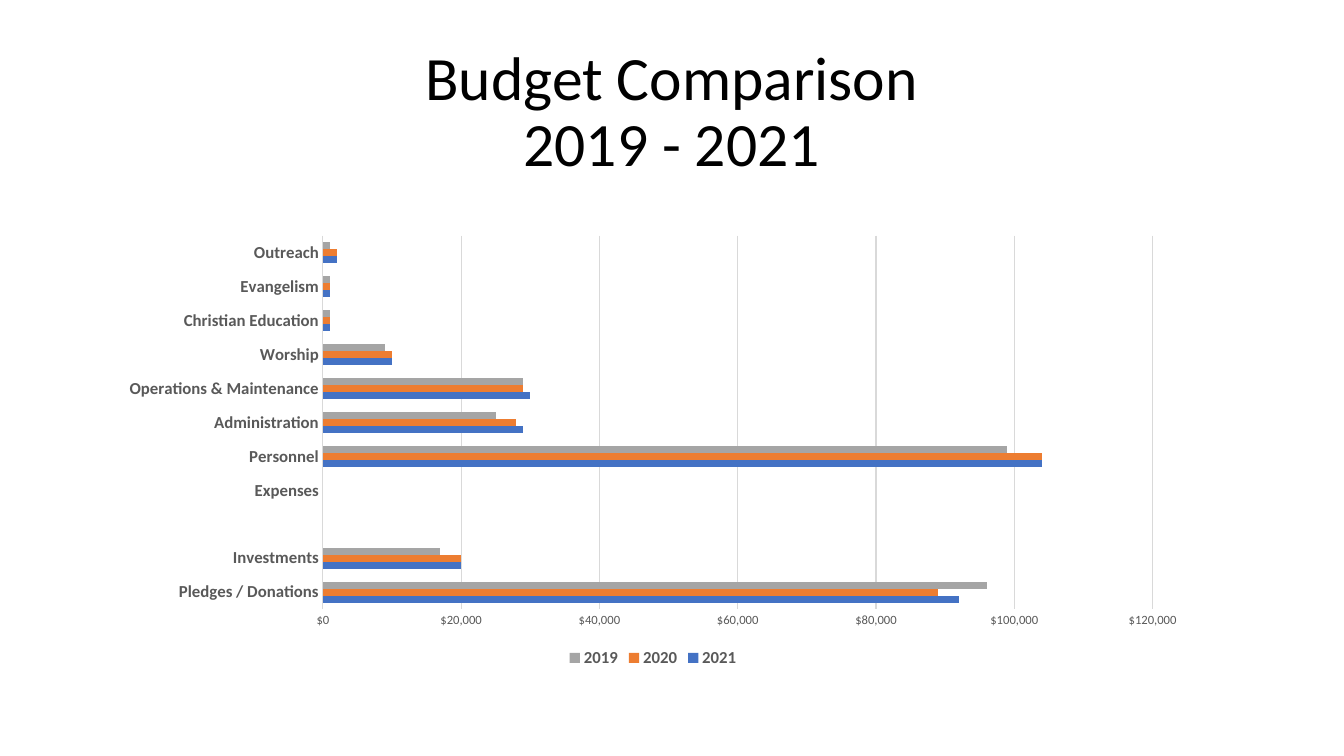
import pptx
import pptx.chart.data
import pptx.dml.color
import pptx.enum.chart
import pptx.enum.text
import pptx.util

Pt = pptx.util.Pt

FONT = "Calibri"
TITLE_LINES = ["Budget Comparison", "2019 - 2021"]
TITLE_BOX = (66, 28.8, 828, 104.4)
CHART_BOX = (77, 162, 779, 318)
YEARS = [("2021", "4472C4"), ("2020", "ED7D31"), ("2019", "A5A5A5")]
BUDGET = [
    ("Pledges / Donations", 92000, 89000, 96000),
    ("Investments", 20000, 20000, 17000),
    ("", None, None, None),
    ("Expenses", None, None, None),
    ("Personnel", 104000, 104000, 99000),
    ("Administration", 29000, 28000, 25000),
    ("Operations & Maintenance", 30000, 29000, 29000),
    ("Worship", 10000, 10000, 9000),
    ("Christian Education", 1000, 1000, 1000),
    ("Evangelism", 1000, 1000, 1000),
    ("Outreach", 2000, 2000, 1000),
]


def color(value):
    return pptx.dml.color.RGBColor.from_string(value)


def set_font(font, size, value, bold=False):
    font.name = FONT
    font.size = Pt(size)
    font.bold = bold
    font.color.rgb = color(value)


def set_line(line):
    line.color.rgb = color("D9D9D9")
    line.width = Pt(0.75)


def add_title(page):
    frame = page.shapes.add_textbox(*map(Pt, TITLE_BOX)).text_frame
    frame.word_wrap = True
    frame.vertical_anchor = pptx.enum.text.MSO_ANCHOR.MIDDLE
    para = frame.paragraphs[0]
    para.alignment = pptx.enum.text.PP_ALIGN.CENTER
    para.line_spacing = 0.9
    for index, line in enumerate(TITLE_LINES):
        if index:
            para.add_line_break()
        span = para.add_run()
        span.text = line
        set_font(span.font, 44, "000000")


def add_budget_chart(page):
    names, *columns = zip(*BUDGET)
    data = pptx.chart.data.CategoryChartData(number_format='"$"#,##0')
    data.categories = names
    for (year, _), values in zip(YEARS, columns):
        data.add_series(year, values)
    kind = pptx.enum.chart.XL_CHART_TYPE.BAR_CLUSTERED
    chart = page.shapes.add_chart(kind, *map(Pt, CHART_BOX), data).chart
    chart.has_title = False
    set_font(chart.font, 10, "000000")

    plot = chart.plots[0]
    plot.gap_width = 182
    plot.vary_by_categories = False
    for series, (_, fill) in zip(plot.series, YEARS):
        series.format.fill.solid()
        series.format.fill.fore_color.rgb = color(fill)
        series.invert_if_negative = False

    no_tick = pptx.enum.chart.XL_TICK_MARK.NONE
    for axis, size, bold in [(chart.category_axis, 12, True), (chart.value_axis, 9, False)]:
        axis.major_tick_mark = axis.minor_tick_mark = no_tick
        set_font(axis.tick_labels.font, size, "595959", bold)
    chart.category_axis.has_major_gridlines = False
    set_line(chart.category_axis.format.line)

    amounts = chart.value_axis
    amounts.minimum_scale = 0
    amounts.maximum_scale = 120000
    amounts.major_unit = 20000
    amounts.has_major_gridlines = True
    set_line(amounts.major_gridlines.format.line)
    amounts.format.line.fill.background()
    amounts.tick_labels.number_format = '"$"#,##0'
    amounts.tick_labels.number_format_is_linked = False

    chart.has_legend = True
    chart.legend.position = pptx.enum.chart.XL_LEGEND_POSITION.BOTTOM
    chart.legend.include_in_layout = False
    set_font(chart.legend.font, 12, "595959", True)


def main():
    deck = pptx.Presentation()
    deck.slide_width = Pt(960)
    deck.slide_height = Pt(540)
    page = deck.slides.add_slide(deck.slide_layouts[6])
    add_title(page)
    add_budget_chart(page)
    deck.save("out.pptx")


if __name__ == "__main__":
    main()
